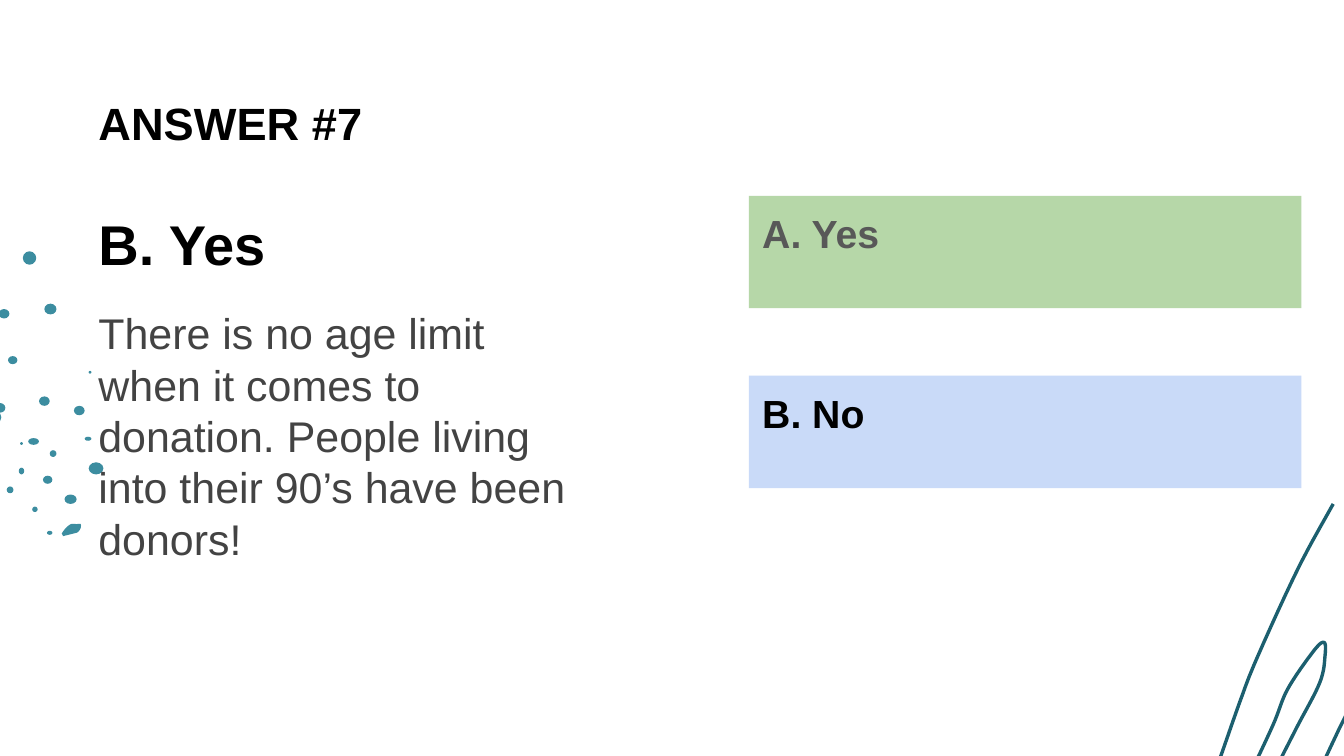
from pptx import Presentation
from pptx.dml.color import RGBColor
from pptx.enum.shapes import MSO_SHAPE
from pptx.enum.text import MSO_ANCHOR, PP_ALIGN
from pptx.util import Inches, Pt

ELLIPSE, RECTANGLE = MSO_SHAPE.OVAL, MSO_SHAPE.RECTANGLE
TOP, MIDDLE, LEFT = MSO_ANCHOR.TOP, MSO_ANCHOR.MIDDLE, PP_ALIGN.LEFT

# The slide is 16:9, on a grid of square cells, 1000 columns wide.
COLUMNS = 1000
ROWS = COLUMNS * 9 / 16
CELL = Inches(10) // COLUMNS
FONT = "Arial"
COLORS = {
    "background": "FFFFFF", "black": "000000", "body": "434343",
    "muted": "585858", "dots": "3C8DA0", "scribble": "1C5F6F",
    "green": "B6D7A8", "blue": "C9DAF8",
}

# Dots as left, top, width, height in cells of their box.
DOTS = [
    (-12, 118, 13, 11), (15, 142, 2, 2), (14, 161, 4, 5), (24, 190, 4, 4),
    (35, 208, 4, 3), (48, 181, 9, 7), (32, 167, 7, 6), (5, 175, 5, 5),
    (37, 148, 5, 5), (21, 139, 8, 5), (29, 108, 8, 7), (-3, 113, 7, 7),
    (6, 78, 7, 6), (-1, 43, 8, 7), (66, 89, 2, 2), (55, 115, 8, 7),
    (63, 138, 5, 3), (66, 157, 11, 9), (33, 39, 9, 8), (17, 0, 10, 10),
]
LEAF = [(46, 210), (49, 206), (53, 203), (57, 203), (60, 203),
        (60, 206), (58, 209), (55, 210), (51, 211), (47, 212)]

# Points that the scribble passes through, in cells of its box.
SCRIBBLE = [
    (87, 1), (66, 39), (49, 74), (28, 121), (18, 147), (5, 184), (1, 197),
    (4, 211), (14, 213), (23, 205), (42, 166), (53, 139), (72, 111),
    (80, 104), (81, 113), (77, 134), (59, 169), (39, 209), (25, 241),
    (27, 262), (40, 264), (52, 256), (60, 239), (68, 220), (85, 182),
    (102, 149), (125, 121), (134, 114), (137, 131), (121, 176), (104, 206),
    (85, 246), (70, 278), (70, 296), (78, 296), (90, 284), (100, 268),
    (116, 231), (155, 156), (170, 145), (178, 151), (172, 186), (136, 251),
    (115, 286), (104, 306), (108, 321), (125, 323), (138, 310), (148, 291),
    (196, 191),
]


def color(name):
    return RGBColor.from_string(COLORS[name])


def cells(*counts):
    return [round(count * CELL) for count in counts]


def fill_plain(shape, color_name):
    shape.shadow.inherit = False
    shape.fill.solid()
    shape.fill.fore_color.rgb = color(color_name)
    shape.line.fill.background()


def smooth_curve(points, steps=8):
    """Return points along a Catmull-Rom curve through the given points."""
    padded = [points[0], *points, points[-1]]
    curve = [points[0]]
    for a, b, c, d in zip(padded, padded[1:], padded[2:], padded[3:]):
        for step in range(1, steps + 1):
            t = step / steps
            curve.append(tuple(
                0.5 * (2 * q + (r - p) * t + (2 * p - 5 * q + 4 * r - s) * t**2
                       + (3 * q - p - 3 * r + s) * t**3)
                for p, q, r, s in zip(a, b, c, d)))
    return curve


def add_outline(shapes, left, top, points, close):
    placed = [cells(left + x, top + y) for x, y in smooth_curve(points)]
    builder = shapes.build_freeform(*placed[0])
    builder.add_line_segments(placed[1:], close=close)
    return builder.convert_to_shape()


def add_dots(slide, left, top):
    group = slide.shapes.add_group_shape()
    fill_plain(add_outline(group.shapes, left, top, LEAF, True), "dots")
    for x, y, width, height in DOTS:
        dot = group.shapes.add_shape(
            ELLIPSE, *cells(left + x, top + y, width, height))
        fill_plain(dot, "dots")


def add_scribble(slide, left, top):
    scribble = add_outline(slide.shapes, left, top, SCRIBBLE, False)
    scribble.shadow.inherit = False
    scribble.fill.background()
    scribble.line.color.rgb = color("scribble")
    scribble.line.width = Pt(1.8)


def add_text(shapes, box, paragraphs, anchor=TOP):
    """Paragraphs are tuples of text, size, color name, bold, space before."""
    frame = shapes.add_textbox(*cells(*box)).text_frame
    frame.word_wrap = True
    frame.vertical_anchor = anchor
    frame.margin_left = frame.margin_right = Inches(0.1)
    frame.margin_top = frame.margin_bottom = Inches(0.1)
    for index, (text, size, color_name, bold, before) in enumerate(paragraphs):
        paragraph = frame.add_paragraph() if index else frame.paragraphs[0]
        paragraph.alignment = LEFT
        if before:
            paragraph.space_before = Pt(before)
        run = paragraph.add_run()
        run.text = text
        run.font.name = FONT
        run.font.size = Pt(size)
        run.font.bold = bold
        run.font.color.rgb = color(color_name)


def add_title(slide, box):
    add_text(slide.shapes, box,
             [("ANSWER #7", 24.2, "black", True, 0)], anchor=MIDDLE)


def add_answer(slide, box):
    add_text(slide.shapes, box, [
        ("B. Yes", 30, "black", True, 0),
        ("There is no age limit when it comes to donation. People living "
         "into their 90’s have been donors!", 23, "body", False, 16),
    ])


def add_options(slide, box, options):
    """Stack one bar per option, with a gap of 0.6 bar between them."""
    left, top, width, height = box
    gap_share = 0.6
    bar_height = height / (len(options) + gap_share * (len(options) - 1))
    for index, (text, text_color, bar_color) in enumerate(options):
        bar_top = top + index * bar_height * (1 + gap_share)
        group = slide.shapes.add_group_shape()
        bar = group.shapes.add_shape(
            RECTANGLE, *cells(left, bar_top, width, bar_height))
        fill_plain(bar, bar_color)
        add_text(group.shapes, (left, bar_top, width, bar_height * 2 / 3),
                 [(text, 21, text_color, True, 0)])


def main():
    presentation = Presentation()
    presentation.slide_width, presentation.slide_height = cells(COLUMNS, ROWS)
    slide = presentation.slides.add_slide(presentation.slide_layouts[6])
    slide.background.fill.solid()
    slide.background.fill.fore_color.rgb = color("background")

    add_dots(slide, 0, 187)
    add_scribble(slide, 905, 374)
    add_answer(slide, (63.4, 146, 383, 384))
    add_title(slide, (63.4, 59.6, 912, 63))
    add_options(slide, (557.3, 145.8, 411, 217.4), [
        ("A. Yes", "muted", "green"),
        ("B. No", "black", "blue"),
    ])
    presentation.save("out.pptx")


if __name__ == "__main__":
    main()
